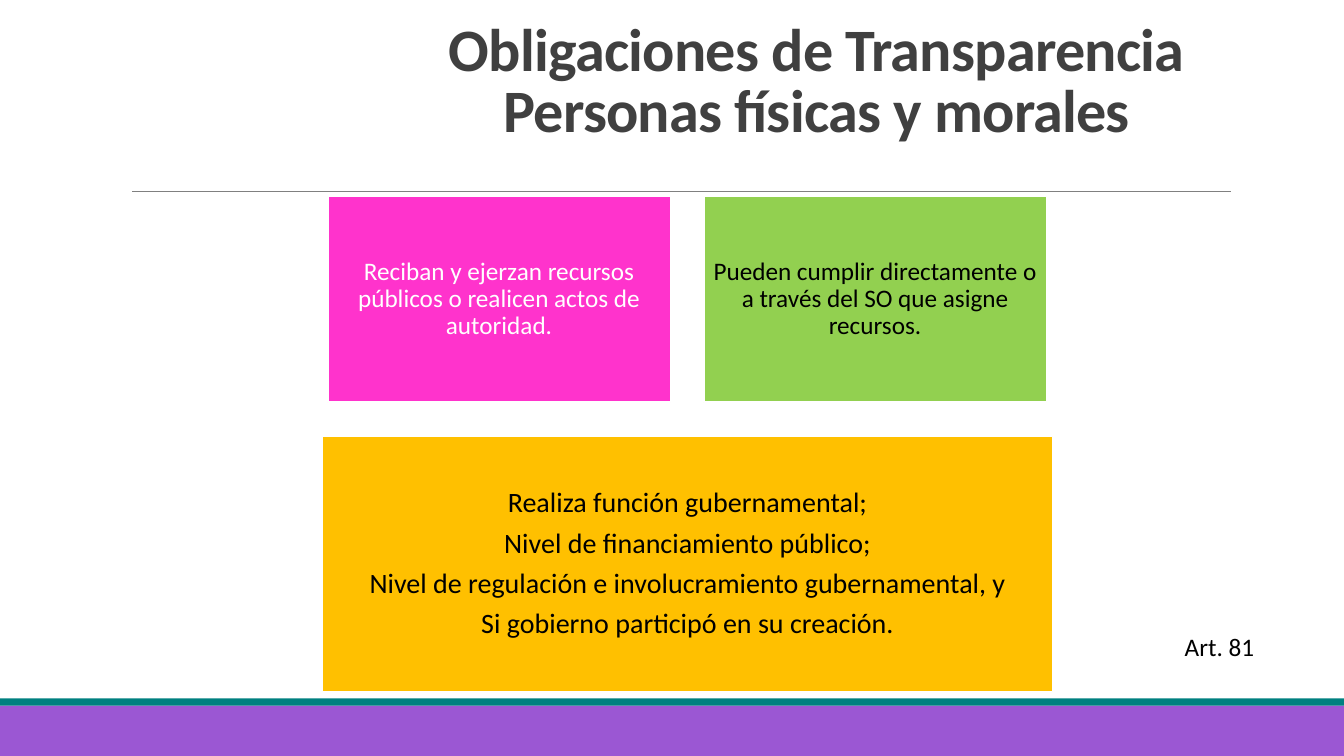
from pptx import Presentation
from pptx.dml.color import RGBColor
from pptx.enum.shapes import MSO_CONNECTOR, MSO_SHAPE
from pptx.enum.text import MSO_ANCHOR as Anchor, MSO_AUTO_SIZE as AutoSize, PP_ALIGN as Align
from pptx.oxml.ns import qn
from pptx.util import Pt
from lxml.etree import SubElement

EMU_PER_PX = 9144
SLIDE_WIDTH, SLIDE_HEIGHT = 1333, 750
FONT = "Calibri"
WHITE = RGBColor(0xFF, 0xFF, 0xFF)
BLACK = RGBColor(0x00, 0x00, 0x00)
CHARCOAL = RGBColor(0x40, 0x40, 0x40)
GRAY = RGBColor(0x80, 0x80, 0x80)
PURPLE = RGBColor(0x9B, 0x57, 0xD3)
TEAL = RGBColor(0x00, 0x80, 0x80)
PINK = RGBColor(0xFF, 0x33, 0xCC)
GREEN = RGBColor(0x92, 0xD0, 0x50)
AMBER = RGBColor(0xFF, 0xC0, 0x00)


def px(*lengths):
    """Turn pixel lengths into a list of EMU."""
    return [length * EMU_PER_PX for length in lengths]


def write_lines(frame, lines, size, color, spacing=1.0, gap=0, bold=False):
    """Write centred paragraphs of one style into a text frame."""
    frame.word_wrap = True
    frame.text = "\n".join(lines)
    for index, paragraph in enumerate(frame.paragraphs):
        paragraph.alignment = Align.CENTER
        paragraph.line_spacing = spacing
        paragraph.space_before = Pt(gap if index else 0)
        font = paragraph.font
        font.name, font.size, font.bold = FONT, Pt(size), bold
        font.color.rgb = color


def add_title(slide, text):
    """Place and format the title placeholder."""
    title = slide.shapes.title
    title.left, title.top, title.width, title.height = px(286, 64, 1048, 85)
    frame = title.text_frame
    frame.auto_size = AutoSize.NONE
    frame.vertical_anchor = Anchor.BOTTOM
    write_lines(frame, [text], 43, CHARCOAL, spacing=0.85, bold=True)
    for run in frame.paragraphs[0].runs:
        run.font._element.set("spc", "-50")


def add_block(slide, box, fill):
    """Add a plain filled rectangle."""
    block = slide.shapes.add_shape(MSO_SHAPE.RECTANGLE, *px(*box))
    block.shadow.inherit = False
    block.fill.solid()
    block.fill.fore_color.rgb = fill
    block.line.fill.background()
    return block


def add_card(slide, box, fill, lines, size, color):
    """Add a white-edged rectangle with centred text."""
    card = add_block(slide, box, fill)
    card.line.color.rgb = WHITE
    card.line.width = Pt(1.25)
    frame = card.text_frame
    frame.vertical_anchor = Anchor.MIDDLE
    frame.margin_left, frame.margin_top, frame.margin_right, frame.margin_bottom = px(7, 7, 7, 7)
    write_lines(frame, lines, size, color, spacing=0.9, gap=7)


def add_rule(slide, left, right, top):
    """Add the thin horizontal line below the title."""
    rule = slide.shapes.add_connector(MSO_CONNECTOR.STRAIGHT, *px(left, top, right, top))
    rule.line.color.rgb = GRAY
    rule.line.width = Pt(0.5)
    SubElement(rule._element.spPr, qn("a:effectLst"))


def add_label(slide, box, text):
    """Add a small centred text box."""
    label = slide.shapes.add_textbox(*px(*box))
    write_lines(label.text_frame, [text], 18, BLACK)


def main():
    """Build and save the slide."""
    presentation = Presentation()
    presentation.slide_width, presentation.slide_height = px(SLIDE_WIDTH, SLIDE_HEIGHT)
    slide = presentation.slides.add_slide(presentation.slide_layouts.get_by_name("Title Only"))

    add_block(slide, (0, 700, SLIDE_WIDTH, 50), PURPLE)
    add_block(slide, (0, 693, SLIDE_WIDTH, 7), TEAL)
    add_rule(slide, 131, 1221, 190)
    add_title(slide, "Obligaciones de Transparencia\vPersonas físicas y morales")
    add_label(slide, (1128, 621, 163, 40), "Art. 81")

    add_card(slide, (325, 195, 340, 204), PINK,
             ["Reciban y ejerzan recursos públicos o realicen actos de autoridad."], 18, WHITE)
    add_card(slide, (698, 195, 340, 204), GREEN,
             ["Pueden cumplir directamente o a través del SO que asigne recursos."], 18, BLACK)
    add_card(slide, (320, 433, 724, 253), AMBER,
             ["Realiza función gubernamental;",
              "Nivel de financiamiento público;",
              "Nivel de regulación e involucramiento gubernamental, y",
              "Si gobierno participó en su creación."], 20, BLACK)

    presentation.save("out.pptx")


if __name__ == "__main__":
    main()
